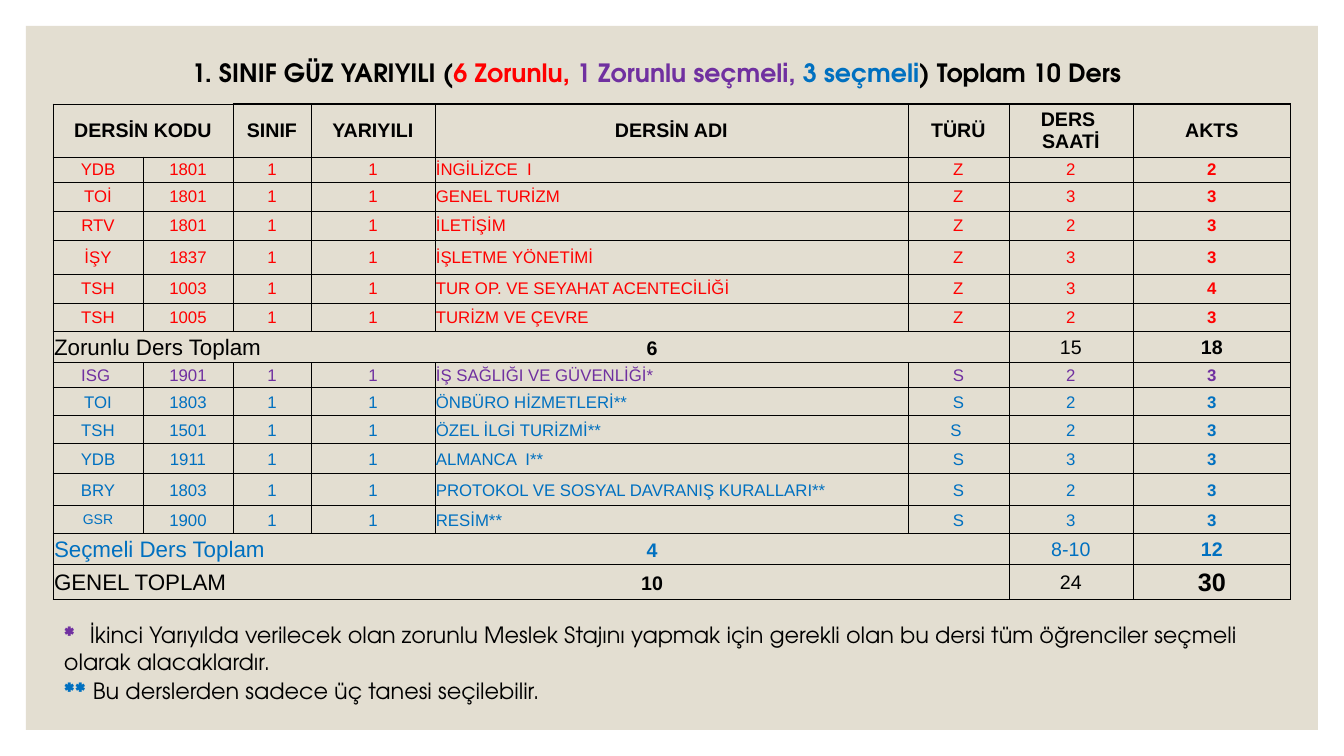
from lxml import etree
from pptx import Presentation, util as u
from pptx.dml.color import RGBColor
from pptx.enum import shapes, text
from pptx.oxml import ns

PX = 914400 / 100.8
COLORS = {"black": "000000", "red": "FF0000", "purple": "7030A0",
          "blue": "0070C0", "panel": "E3DED1", "page": "FFFFFF"}
TABLE_FONT, TEXT_FONT = "Arial", "TeX Gyre Adventor"
CENTER = text.PP_ALIGN.CENTER


def px(value):
    return u.Emu(round(value * PX))


def fill_paragraph(paragraph, font, runs, align=None, tab=None):
    """Add runs of (words, size, color, bold); tab is (position in px, alignment)."""
    paragraph.alignment = align
    if tab:
        properties = paragraph._p.get_or_add_pPr()
        stops = etree.SubElement(properties, ns.qn("a:tabLst"))
        etree.SubElement(stops, ns.qn("a:tab"), pos=str(px(tab[0])), algn=tab[1])
    for words, size, color, bold in runs:
        run = paragraph.add_run()
        run.text = words
        run.font.name = font
        run.font.size = u.Pt(size)
        run.font.bold = bold
        run.font.color.rgb = RGBColor.from_string(COLORS[color])


presentation = Presentation()
presentation.slide_width, presentation.slide_height = px(1344), px(756)
slide = presentation.slides.add_slide(presentation.slide_layouts[6])
slide.background.fill.solid()
slide.background.fill.fore_color.rgb = RGBColor.from_string(COLORS["page"])

panel = slide.shapes.add_shape(shapes.MSO_SHAPE.RECTANGLE, px(26), px(26), px(1292), px(730 - 26))
panel.shadow.inherit = False
panel.fill.solid()
panel.fill.fore_color.rgb = RGBColor.from_string(COLORS["panel"])
panel.line.fill.background()

# Course table: code, number, class, term, name, type, hours, credits
headings = ["DERSİN KODU", "", "SINIF", "YARIYILI", "DERSİN ADI", "TÜRÜ", "DERS \nSAATİ", "AKTS"]
required = [
    ("YDB", "1801", "İNGİLİZCE  I", "Z", "2", "2"),
    ("TOİ", "1801", "GENEL TURİZM", "Z", "3", "3"),
    ("RTV", "1801", "İLETİŞİM", "Z", "2", "3"),
    ("İŞY", "1837", "İŞLETME YÖNETİMİ", "Z", "3", "3"),
    ("TSH", "1003", "TUR OP. VE SEYAHAT ACENTECİLİĞİ", "Z", "3", "4"),
    ("TSH", "1005", "TURİZM VE ÇEVRE", "Z", "2", "3"),
]
required_elective = [("ISG ", "1901", "İŞ SAĞLIĞI VE GÜVENLİĞİ*", "S", "2", "3")]
electives = [
    ("TOI", "1803", "ÖNBÜRO HİZMETLERİ**", "S", "2", "3"),
    ("TSH", "1501", "ÖZEL İLGİ TURİZMİ**", "S ", "2", "3"),
    ("YDB", "1911", "ALMANCA  I**", "S", "3", "3"),
    ("BRY", "1803", "PROTOKOL VE SOSYAL DAVRANIŞ KURALLARI**", "S", "2", "3"),
    ("GSR", "1900", "RESİM**", "S", "3", "3"),
]
groups = [
    ("red", required, [("Zorunlu Ders Toplam", "6", "15", "18", "black")]),
    ("purple", required_elective, []),
    ("blue", electives, [("Seçmeli Ders Toplam", "4", "8-10", "12", "blue"),
                         ("GENEL TOPLAM", "10", "24", "30", "black")]),
]

# Each row is a list of cells, each cell a list of runs
rows = [[[(heading, 14, "black", True)] for heading in headings]]
total_rows = []
for color, courses, totals in groups:
    for code, number, name, kind, hours, credits in courses:
        values = [code, number, "1", "1", name, kind, hours, credits]
        rows.append([[(value, 10 if value == "GSR" else 12, color, column == 7)]
                     for column, value in enumerate(values)])
    for label, count, hours, credits, total_color in totals:
        total_rows.append(len(rows))
        rows.append([[(label + "\t", 16, total_color, False), (count, 14, total_color, True)],
                     *[[] for _ in range(5)],
                     [(hours, 14, total_color, False)],
                     [(credits, 18 if credits == "30" else 14, total_color, True)]])

column_widths = [90, 90, 78, 124, 473, 101, 124, 158]
row_heights = [53, 25, 29, 29, 34, 29, 29, 31, 25, 28, 28, 30, 32, 28, 31, 35]
table = slide.shapes.add_table(len(rows), len(column_widths), px(53), px(104),
                               px(sum(column_widths)), px(sum(row_heights))).table
table.first_row = table.horz_banding = False
for column, width in zip(table.columns, column_widths):
    column.width = px(width)
for row, height in zip(table.rows, row_heights):
    row.height = px(height)

for row_index, row in enumerate(rows):
    for column_index, runs in enumerate(row):
        cell = table.cell(row_index, column_index)
        cell.margin_left = cell.margin_right = cell.margin_top = px(1)
        cell.margin_bottom = 0
        cell.vertical_anchor = text.MSO_ANCHOR.MIDDLE
        widths = {"L": 0.5, "R": 1 if column_index == 7 else 0.5,
                  "T": 1 if row_index == 0 and column_index > 1 else 0.5, "B": 0.5}
        for side, width in widths.items():
            border = etree.SubElement(cell._tc.get_or_add_tcPr(), ns.qn("a:ln" + side),
                                      w=str(u.Pt(width)))
            solid = etree.SubElement(border, ns.qn("a:solidFill"))
            etree.SubElement(solid, ns.qn("a:srgbClr"), val=COLORS["black"])
        cell.fill.background()
        is_total = row_index in total_rows and column_index == 0
        is_name = row_index > 0 and column_index == 4
        frame = cell.text_frame
        if runs and runs[0][0]:
            lines = [runs] if is_total else [[(line, *runs[0][1:])] for line in runs[0][0].split("\n")]
            for line_index, line in enumerate(lines):
                paragraph = frame.add_paragraph() if line_index else frame.paragraphs[0]
                fill_paragraph(paragraph, TABLE_FONT, line,
                               None if is_total or is_name else CENTER,
                               (598, "ctr") if is_total else None)

table.cell(0, 0).merge(table.cell(0, 1))
for row_index in total_rows:
    table.cell(row_index, 0).merge(table.cell(row_index, 5))

# Title and footnotes
title_runs = [("1. SINIF GÜZ YARIYILI (", 18, "black", True),
              ("6 Zorunlu, ", 18, "red", True),
              ("1 Zorunlu seçmeli, ", 18, "purple", True),
              ("3 seçmeli", 18, "blue", True),
              (") Toplam 10 Ders ", 18, "black", True)]
internship_note = [("*", 16, "purple", True),
                   ("\t", 12, "red", True),
                   ("İkinci Yarıyılda verilecek olan zorunlu Meslek Stajını yapmak için gerekli olan "
                    "bu dersi tüm öğrenciler seçmeli olarak alacaklardır.", 16, "black", False)]
choice_note = [("**", 16, "blue", True),
               (" ", 18, "black", False),
               ("Bu derslerden sadece üç tanesi seçilebilir.", 16, "black", False)]
text_boxes = [
    ((124, 52, 1072, 40), [(title_runs, CENTER, None)]),
    ((54, 616, 1246, 99), [(internship_note, None, (26, "l")), (choice_note, None, None)]),
]
for box, paragraphs in text_boxes:
    frame = slide.shapes.add_textbox(*map(px, box)).text_frame
    frame.word_wrap = True
    frame.auto_size = text.MSO_AUTO_SIZE.SHAPE_TO_FIT_TEXT
    for index, (runs, align, tab) in enumerate(paragraphs):
        paragraph = frame.add_paragraph() if index else frame.paragraphs[0]
        fill_paragraph(paragraph, TEXT_FONT, runs, align, tab)

presentation.save("out.pptx")
